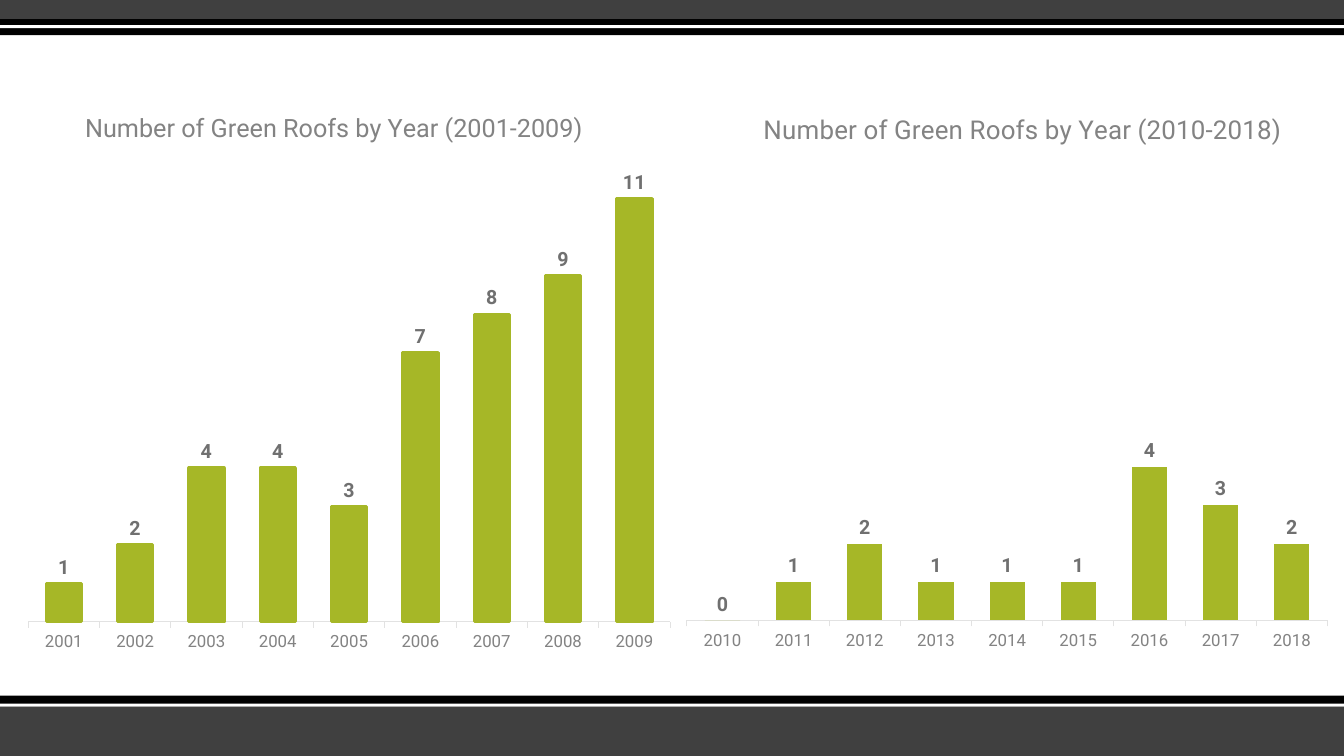
from lxml import etree
from pptx import Presentation
from pptx.chart.data import CategoryChartData
from pptx.dml.color import RGBColor
from pptx.enum.chart import XL_CHART_TYPE, XL_LABEL_POSITION, XL_TICK_MARK
from pptx.enum.shapes import MSO_SHAPE
from pptx.oxml.ns import qn
from pptx.util import Inches, Pt

COLUMN_CLUSTERED = XL_CHART_TYPE.COLUMN_CLUSTERED
OUTSIDE_END = XL_LABEL_POSITION.OUTSIDE_END
TICK_OUTSIDE, TICK_NONE = XL_TICK_MARK.OUTSIDE, XL_TICK_MARK.NONE
RECTANGLE = MSO_SHAPE.RECTANGLE

BLACK = RGBColor(0x00, 0x00, 0x00)
WHITE = RGBColor(0xFF, 0xFF, 0xFF)
CHARCOAL = RGBColor(0x40, 0x40, 0x40)
LABEL_GRAY = RGBColor(0x70, 0x70, 0x70)
AXIS_GRAY = RGBColor(0x83, 0x83, 0x83)
LINE_GRAY = RGBColor(0xE2, 0xE2, 0xE2)
GREEN = RGBColor(0xA6, 0xB7, 0x27)

FONT = "Roboto"
SLIDE_WIDTH = Inches(13.33)
CHART_TOP, CHART_WIDTH = Inches(0.95), Inches(6.66)

# top, height, colour
BANDS = [
    (7, 0.5, CHARCOAL),
    (6.9, 0.11, BLACK),
    (6.98, 0.03, WHITE),
    (0, 0.19, CHARCOAL),
    (0.19, 0.16, BLACK),
    (0.25, 0.03, WHITE),
]


def add_band(slide, top, height, color):
    band = slide.shapes.add_shape(RECTANGLE, 0, Inches(top), SLIDE_WIDTH, Inches(height))
    band.shadow.inherit = False
    band.fill.solid()
    band.fill.fore_color.rgb = color
    band.line.fill.background()


def set_font(font, size, color, bold=False):
    font.name = FONT
    font.size = Pt(size)
    font.color.rgb = color
    font.bold = bold


def set_layout(parent, position, inner=False):
    """Place a chart title or plot area by fractions of the chart's size."""
    for old_layout in parent.findall(qn("c:layout")):
        parent.remove(old_layout)
    layout = etree.Element(qn("c:layout"))
    manual = etree.SubElement(layout, qn("c:manualLayout"))
    settings = [("layoutTarget", "inner")] if inner else []
    settings += [("xMode", "edge"), ("yMode", "edge")]
    settings += zip("xywh", position)
    for name, value in settings:
        etree.SubElement(manual, qn("c:" + name)).set("val", str(value))
    text = parent.find(qn("c:tx"))
    if text is None:
        parent.insert(0, layout)
    else:
        text.addnext(layout)


def add_title(chart, text, size, position):
    chart.has_title = True
    title = chart.chart_title
    title.include_in_layout = False
    paragraph = title.text_frame.paragraphs[0]
    paragraph.text = text
    set_font(paragraph.font, size, AXIS_GRAY)
    set_layout(title._element, position)


def format_axes(chart, maximum):
    years = chart.category_axis
    years.has_major_gridlines = False
    years.major_tick_mark = TICK_OUTSIDE
    years.minor_tick_mark = TICK_NONE
    years.format.line.color.rgb = LINE_GRAY
    years.format.line.width = Pt(0.75)
    set_font(years.tick_labels.font, 12, AXIS_GRAY)
    counts = chart.value_axis
    counts.minimum_scale, counts.maximum_scale = 0, maximum
    counts.has_major_gridlines = False
    counts.visible = False


def format_columns(chart, outline):
    plot = chart.plots[0]
    plot.gap_width, plot.overlap = 103, -27
    plot.vary_by_categories = False
    series = plot.series[0]
    series.format.fill.solid()
    series.format.fill.fore_color.rgb = GREEN
    if outline:
        series.format.line.color.rgb = GREEN
        series.format.line.width = Pt(outline)
    else:
        series.format.line.fill.background()
    labels = series.data_labels
    labels.show_value = True
    labels.position = OUTSIDE_END
    set_font(labels.font, 14, LABEL_GRAY, bold=True)


def add_roof_chart(slide, left, height, first_year, counts, maximum,
                   title_size, title_position, plot_position, outline=0):
    years = range(first_year, first_year + len(counts))
    data = CategoryChartData()
    data.categories = [str(year) for year in years]
    data.add_series("Series 1", counts)
    chart = slide.shapes.add_chart(
        COLUMN_CLUSTERED, left, CHART_TOP, CHART_WIDTH, Inches(height), data).chart
    chart.has_legend = False
    set_font(chart.font, 10, CHARCOAL)
    add_title(chart, f"Number of Green Roofs by Year ({years[0]}-{years[-1]})",
              title_size, title_position)
    format_axes(chart, maximum)
    format_columns(chart, outline)
    set_layout(chart._chartSpace.chart.plotArea, plot_position, inner=True)


def main():
    presentation = Presentation()
    presentation.slide_width = SLIDE_WIDTH
    presentation.slide_height = Inches(7.5)
    slide = presentation.slides.add_slide(presentation.slide_layouts[6])
    for band in BANDS:
        add_band(slide, *band)
    add_roof_chart(slide, CHART_WIDTH, 5.64, 2010, [0, 1, 2, 1, 1, 1, 4, 3, 2], 5,
                   18.5, (0.13, 0.02), (0.023, 0.585, 0.954, 0.338))
    add_roof_chart(slide, 0, 5.56, 2001, [1, 2, 4, 4, 3, 7, 8, 9, 11], 12,
                   18, (0.12, 0.02), (0.042, 0.115, 0.956, 0.824), outline=2.25)
    presentation.save("out.pptx")


if __name__ == "__main__":
    main()
